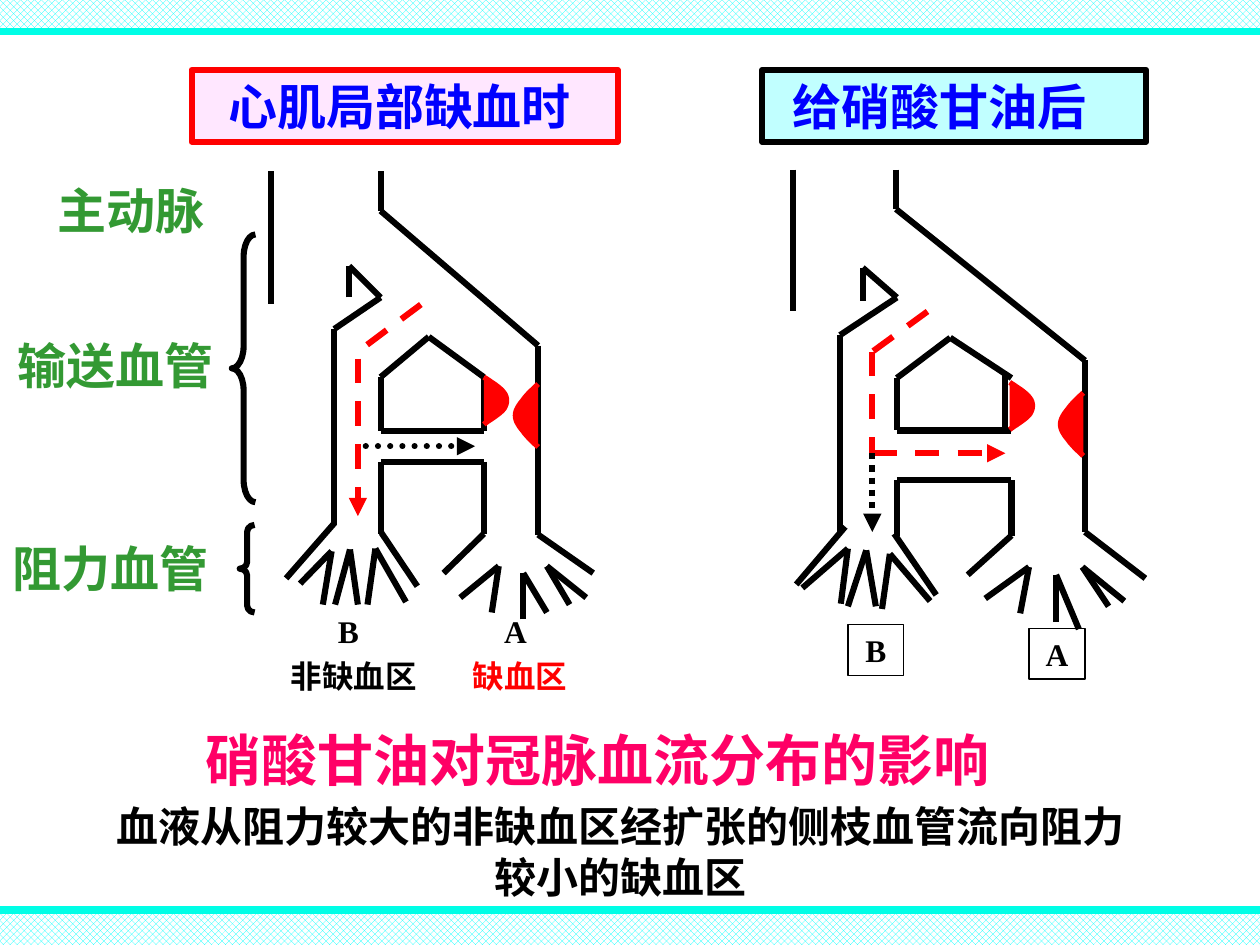
from dataclasses import dataclass
from itertools import pairwise

from lxml import etree
from pptx import Presentation
from pptx.dml.color import RGBColor
from pptx.enum.dml import MSO_LINE, MSO_PATTERN
from pptx.enum.shapes import MSO_CONNECTOR, MSO_SHAPE
from pptx.enum.text import MSO_ANCHOR, MSO_AUTO_SIZE, PP_ALIGN
from pptx.oxml.ns import qn
from pptx.util import Pt

STRAIGHT = MSO_CONNECTOR.STRAIGHT
RECTANGLE, LEFT_BRACE = MSO_SHAPE.RECTANGLE, MSO_SHAPE.LEFT_BRACE
DASH, DOT = MSO_LINE.DASH, MSO_LINE.ROUND_DOT
CHECKER = MSO_PATTERN.LARGE_CHECKER_BOARD
LEFT, CENTER = PP_ALIGN.LEFT, PP_ALIGN.CENTER
MIDDLE, NO_AUTOSIZE = MSO_ANCHOR.MIDDLE, MSO_AUTO_SIZE.NONE


@dataclass(frozen=True)
class Theme:
    chinese: str = "Noto Sans CJK SC"
    latin: str = "Times New Roman"
    white: str = "FFFFFF"
    black: str = "000000"
    red: str = "FF0000"
    blue: str = "0000FF"
    green: str = "339933"
    pink: str = "FF0066"
    pale_pink: str = "FFE7FF"
    pale_cyan: str = "C1FFFF"
    pattern: str = "00FFFF"
    rule: str = "00FEE6"
    title_size: float = 32
    label_size: float = 28
    body_size: float = 24
    small_size: float = 18
    stroke: float = 3.5


def rgb(value):
    return RGBColor.from_string(value)


def bezier(start, first, second, end, steps=8):
    """Points along one cubic curve, without its start."""
    for step in range(1, steps + 1):
        t = step / steps
        weights = ((1 - t) ** 3, 3 * t * (1 - t) ** 2, 3 * t * t * (1 - t), t ** 3)
        yield tuple(sum(weight * point[axis] for weight, point
                        in zip(weights, (start, first, second, end))) for axis in (0, 1))


class SlideBuilder:
    def __init__(self, slide, theme):
        self.slide, self.theme = slide, theme

    def set_text(self, shape, text, size, color, font=None, align=LEFT, inset=7.2):
        font = font or self.theme.chinese
        frame = shape.text_frame
        frame.text = text
        frame.word_wrap = True
        frame.auto_size = NO_AUTOSIZE
        frame.vertical_anchor = MIDDLE
        frame.margin_left, frame.margin_right = Pt(inset), Pt(7.2)
        frame.margin_top = frame.margin_bottom = Pt(0)
        paragraph = frame.paragraphs[0]
        paragraph.alignment = align
        run = paragraph.runs[0]
        run.font.name, run.font.size, run.font.bold = font, Pt(size), True
        run.font.color.rgb = rgb(color)
        etree.SubElement(run._r.get_or_add_rPr(), qn("a:ea"), typeface=font)
        return paragraph

    def placeholder(self, index, box, text, size, color, align=LEFT):
        shape = self.slide.placeholders[index]
        shape.left, shape.top, shape.width, shape.height = map(Pt, box)
        return self.set_text(shape, text, size, color, align=align)

    def body(self, box, text, size, color, line_spacing):
        paragraph = self.placeholder(1, box, text, size, color, CENTER)
        paragraph.line_spacing, paragraph.space_before = Pt(line_spacing), Pt(0)
        properties = paragraph._p.get_or_add_pPr()
        properties.set("marL", "0")
        properties.set("indent", "0")
        etree.SubElement(properties, qn("a:buNone"))

    def label(self, box, text, size, color, font=None):
        shape = self.slide.shapes.add_textbox(*map(Pt, box))
        self.set_text(shape, text, size, color, font)

    def shape(self, box, kind=RECTANGLE, fill=None, line=None, width=None):
        shape = self.slide.shapes.add_shape(kind, *map(Pt, box))
        self.paint(shape, fill, line, width or self.theme.stroke)
        return shape

    def paint(self, shape, fill, line, width):
        shape.shadow.inherit = False
        for target, color in ((shape.fill, fill), (shape.line.fill, line)):
            if color:
                target.solid()
                target.fore_color.rgb = rgb(color)
            else:
                target.background()
        if line:
            shape.line.width = Pt(width)

    def band(self, box):
        fill = self.shape(box).fill
        fill.patterned()
        fill.pattern = CHECKER
        fill.fore_color.rgb, fill.back_color.rgb = rgb(self.theme.pattern), rgb(self.theme.white)

    def line(self, start, end, color=None, width=None, dash=None, arrow=False, rounded=False):
        connector = self.slide.shapes.add_connector(STRAIGHT, *map(Pt, start + end))
        connector.line.color.rgb = rgb(color or self.theme.black)
        connector.line.width = Pt(width or self.theme.stroke)
        if dash:
            connector.line.dash_style = dash
        properties = connector._element.spPr
        outline = properties.find(qn("a:ln"))
        if rounded:
            outline.set("cap", "rnd")
        if arrow:
            etree.SubElement(outline, qn("a:tailEnd"), type="triangle")
        etree.SubElement(properties, qn("a:effectLst"))

    def vessel(self, points):
        for start, end in pairwise(points):
            self.line(start, end)

    def brace(self, box, curl):
        shape = self.shape(box, LEFT_BRACE, line=self.theme.black)
        shape.adjustments[0] = curl

    def plaque(self, origin, curve):
        outline = [(0, 0)]
        for first, second, end in zip(*[iter(curve)] * 3):
            outline.extend(bezier(outline[-1], first, second, end))
        points = [(Pt(origin[0] + x), Pt(origin[1] + y)) for x, y in outline]
        builder = self.slide.shapes.build_freeform(*points[0])
        builder.add_line_segments(points[1:], close=False)
        self.paint(builder.convert_to_shape(), self.theme.red, self.theme.red, 3)


# Vessel walls: each row is one run of joined wall segments
ISCHEMIA_WALLS = [
    [(155, 98), (155, 174)],
    [(217.5, 98), (217.5, 120.5), (307.5, 197.5), (307.5, 305.5), (339, 327.5)],
    [(199.5, 170), (199.5, 152), (217.5, 170), (191, 188), (191, 300)],
    [(276.5, 246.5), (276.5, 215.5), (245, 192.5), (217.5, 215.5), (217.5, 246.5), (276.5, 246.5)],
    [(217.5, 305), (217.5, 264), (276.5, 264), (276.5, 305), (253.5, 327.5)],
    [(191, 299), (163.5, 330.5)], [(218, 304.5), (238.5, 335)],
    [(171.5, 333.5), (189.5, 315), (184.5, 345.5)], [(191.5, 345.5), (200, 314), (204.5, 345.5)],
    [(210, 345.5), (214.5, 313.5), (232, 344)], [(263, 341.5), (285, 323.5), (281, 350)],
    [(299, 354), (299, 327.5), (312.5, 350)], [(325.5, 345.5), (312.5, 323.5), (335, 341.5)],
]
NITROGLYCERIN_WALLS = [
    [(453, 97), (453, 178)],
    [(512, 97), (512, 119.5), (620, 206), (620, 304), (654.5, 330.5)],
    [(493, 172), (493, 153), (512.5, 170), (480, 191.5), (480, 304.5)],
    [(574.5, 245.5), (574.5, 214)],
    [(578, 216), (543, 193), (512.5, 216), (512.5, 246), (577.5, 246)],
    [(512.5, 306), (512.5, 274.5), (578, 274.5), (578, 306), (553, 328.5)],
    [(483, 301), (455, 334)], [(511, 305), (535, 340)],
    [(458.5, 336), (484.5, 313.5), (480.5, 345)], [(484.5, 346.5), (495, 314.5), (500.5, 346.5)],
    [(504, 348), (508.5, 316.5), (531.5, 343.5)], [(563, 342), (588, 324), (583, 350.5)],
    [(603.5, 355.5), (603.5, 328.5), (616.5, 359.5)], [(633.5, 346.5), (618.5, 324), (642.5, 343.5)],
]
INNER_PLAQUE = [(4.5, 3), (9.5, 6), (11.5, 9), (13.5, 11.5), (13.5, 15), (11.5, 18),
                (9.5, 21), (1.5, 25.5), (0, 27)]
OUTER_PLAQUE = [(-3, 3), (-6.5, 6), (-8.5, 9), (-11, 12), (-13, 15), (-13, 18),
                (-13, 21), (-11, 24), (-8.5, 27), (-6.5, 30), (-1.5, 34.5), (0, 36)]


def main():
    theme = Theme()
    presentation = Presentation()
    presentation.slide_width, presentation.slide_height = Pt(720), Pt(540)
    slide = presentation.slides.add_slide(presentation.slide_layouts[1])
    slide.background.fill.solid()
    slide.background.fill.fore_color.rgb = rgb(theme.white)
    builder = SlideBuilder(slide, theme)

    # Patterned bands and rules at the top and bottom
    for band_top, rule_y in ((0, 18), (522, 520)):
        builder.band((0, band_top, 720, 18))
        builder.line((0, rule_y), (720, rule_y), theme.rule, 4.5)

    # Panel headings
    for box, text, fill, line, inset in (
            ((109.5, 40, 243.5, 41), "心肌局部缺血时", theme.pale_pink, theme.red, 21),
            ((435.5, 40, 219.5, 41), "给硝酸甘油后", theme.pale_cyan, theme.black, 17.5)):
        heading = builder.shape(box, fill=fill, line=line)
        builder.set_text(heading, text, theme.label_size, theme.blue, inset=inset)

    # Vessel walls and plaques
    for walls in ISCHEMIA_WALLS + NITROGLYCERIN_WALLS:
        builder.vessel(walls)
    for inner, outer in (((276.5, 215.5), (307.5, 219.5)), ((577, 218.5), (619, 224.5))):
        builder.plaque(inner, INNER_PLAQUE)
        builder.plaque(outer, OUTER_PLAQUE)

    # Blood flow
    builder.line((240.5, 174), (204.5, 201), theme.red, dash=DASH)
    builder.line((204.5, 205), (204.5, 295), theme.red, dash=DASH, arrow=True)
    builder.line((209, 255), (271.5, 255), dash=DOT, arrow=True, rounded=True)
    builder.line((530, 178), (498.5, 201), theme.red, dash=DASH)
    builder.line((498.5, 201), (498.5, 259), theme.red, dash=DASH)
    builder.line((498.5, 259), (574.5, 259), theme.red, dash=DASH, arrow=True)
    builder.line((498.5, 259), (498.5, 304), dash=DOT, arrow=True)

    # Vessel names and braces
    for left, top, text in ((26, 99.5, "主动脉"), (3, 188, "输送血管"), (0, 304, "阻力血管")):
        builder.label((left, top, 138, 41), text, theme.label_size, theme.green)
    builder.brace((132.5, 134, 13.5, 153), 0.94)
    builder.brace((137, 300, 8.5, 50), 0.46)

    # Region labels
    for left, letter in ((186, "B"), (281, "A")):
        builder.label((left, 346, 36, 29), letter, theme.small_size, theme.black, theme.latin)
    builder.label((159, 372, 90, 29), "非缺血区", theme.small_size, theme.black)
    builder.label((263, 372, 76, 29), "缺血区", theme.small_size, theme.red)
    for left, top, letter in ((484.5, 357, "B"), (588, 359, "A")):
        region = builder.shape((left, top, 32, 29), line=theme.black, width=0.75)
        builder.set_text(region, letter, theme.small_size, theme.black, theme.latin, CENTER)

    # Title and explanation
    builder.placeholder(0, (110, 411, 488, 46), "硝酸甘油对冠脉血流分布的影响",
                        theme.title_size, theme.pink)
    builder.body((57, 454, 595, 65), "血液从阻力较大的非缺血区经扩张的侧枝血管流向阻力较小的缺血区",
                 theme.body_size, theme.black, 28.8)
    presentation.save("out.pptx")


if __name__ == "__main__":
    main()
